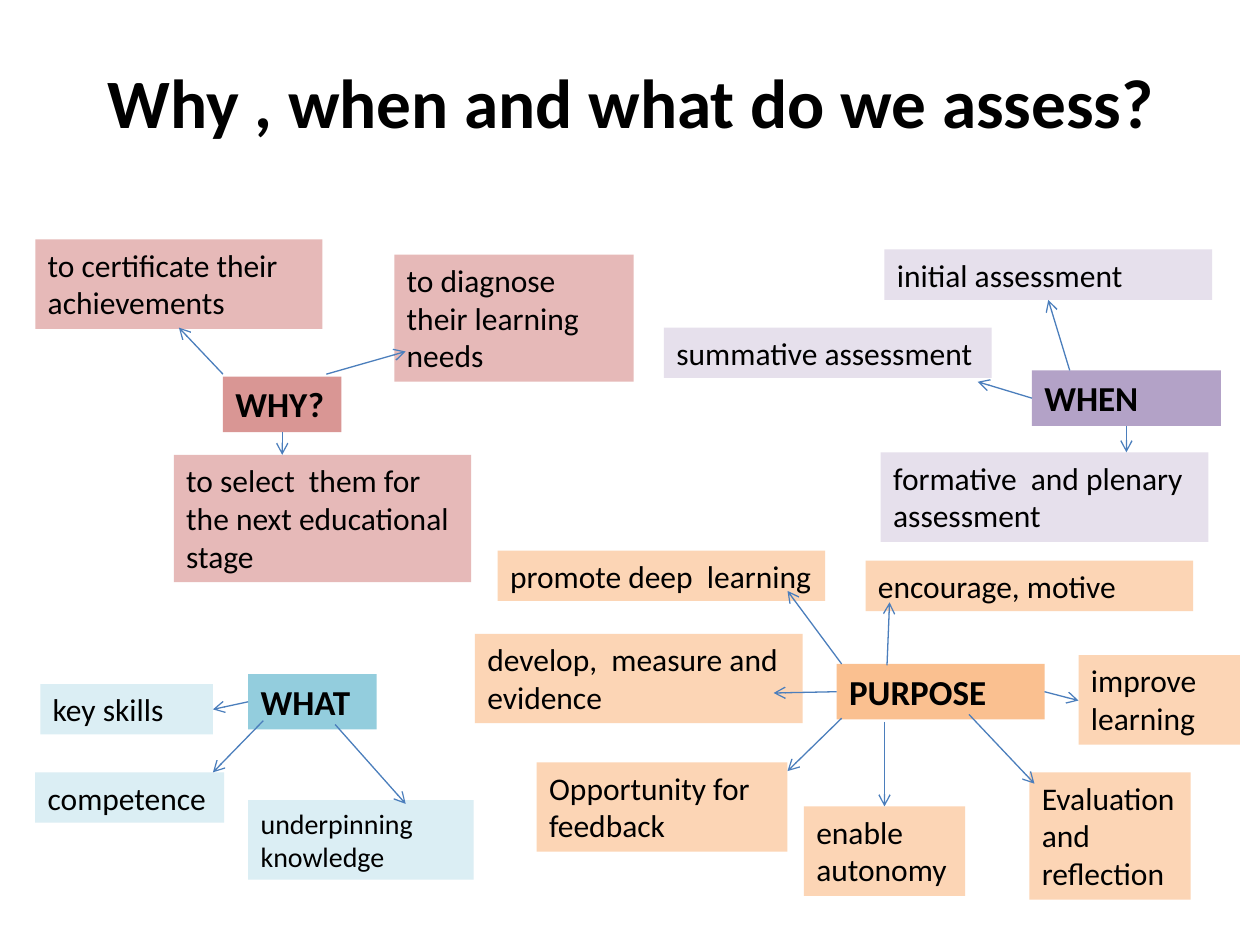
from dataclasses import dataclass

from lxml import etree
from pptx import Presentation
from pptx import util as u
from pptx.dml.color import RGBColor
from pptx.enum import shapes, text
from pptx.oxml.ns import qn

SLIDE_WIDTH, SLIDE_HEIGHT = u.Inches(10), u.Inches(7.5)
COLUMN, ROW = SLIDE_WIDTH / 100, SLIDE_HEIGHT / 75

BLACK = RGBColor(0x00, 0x00, 0x00)
ARROW_BLUE = RGBColor(0x4B, 0x7E, 0xBC)
RED, PALE_RED = RGBColor(0xD9, 0x96, 0x94), RGBColor(0xE6, 0xB9, 0xB8)
AQUA, PALE_AQUA = RGBColor(0x93, 0xCD, 0xDD), RGBColor(0xDB, 0xEE, 0xF4)
PURPLE, PALE_PURPLE = RGBColor(0xB3, 0xA2, 0xC7), RGBColor(0xE6, 0xE0, 0xEC)
ORANGE, PALE_ORANGE = RGBColor(0xFA, 0xC0, 0x90), RGBColor(0xFC, 0xD5, 0xB5)

TITLE_FONT = {"name": "Calibri", "size": u.Pt(39.6), "bold": True}
HUB_FONT = {"name": "Calibri", "size": u.Pt(20), "bold": True}
HUB_ROWS = 4.4
# Box height in rows for each number of text lines
LINE_ROWS = {1: 4.0, 2: 7.1, 3: 10.1}


@dataclass
class Answer:
    """A pale box; position and width are in grid columns and rows."""
    wording: str
    column: float
    row: float
    columns: float
    lines: int = 1
    size: int = 18


@dataclass
class Arrow:
    """An arrow between two (column, row) grid points."""
    start: tuple[float, float]
    end: tuple[float, float]


@dataclass
class Cluster:
    """A question box with its answers and the arrows leading to them."""
    question: str
    column: float
    row: float
    columns: float
    fill: RGBColor
    answer_fill: RGBColor
    answers: list[Answer]
    arrows: list[Arrow]


CLUSTERS = [
    Cluster("WHY?", 17.7, 29.9, 9.4, RED, PALE_RED, [
        Answer("to diagnose their learning needs", 31.3, 20.2, 19, 3),
        Answer("to select  them for the next educational stage", 13.8, 36.1, 23.6, 3),
        Answer("to certificate their achievements", 2.8, 19, 22.8, 2),
    ], [
        Arrow((25.9, 29.7), (32.2, 27.9)),
        Arrow((17.7, 29.7), (14.2, 26)),
        Arrow((22.4, 34.3), (22.4, 36.1)),
    ]),
    Cluster("WHAT", 19.7, 53.5, 10.2, AQUA, PALE_AQUA, [
        Answer("underpinning knowledge", 19.7, 63.5, 17.9, 2, 16),
        Answer("competence", 2.8, 61.3, 15),
        Answer("key skills", 3.2, 54.3, 13.7),
    ], [
        Arrow((19.7, 55.7), (16.9, 56.3)),
        Arrow((20.9, 57.2), (16.9, 61.3)),
        Arrow((26.6, 57.5), (32.2, 63.8)),
    ]),
    Cluster("WHEN", 81.9, 29.4, 15, PURPLE, PALE_PURPLE, [
        Answer("initial assessment", 70.2, 19.8, 26),
        Answer("formative  and plenary assessment", 69.9, 35.9, 26, 2),
        Answer("summative assessment", 52.7, 26, 26),
    ], [
        Arrow((84.9, 29.4), (83.2, 23.8)),
        Arrow((81.9, 31.6), (77.6, 30.3)),
        Arrow((89.4, 33.8), (89.4, 35.9)),
    ]),
    Cluster("PURPOSE", 66.4, 52.7, 16.5, ORANGE, PALE_ORANGE, [
        Answer("encourage, motive", 68.7, 44.5, 26),
        Answer("promote deep  learning", 39.5, 43.7, 26),
        Answer("develop,  measure and evidence", 37.7, 50.3, 26, 2),
        Answer("Opportunity for feedback", 42.6, 60.5, 19.9, 2),
        Answer("enable autonomy", 63.8, 64, 12.8, 2),
        Answer("Evaluation and reflection", 81.7, 61.3, 12.8, 3),
        Answer("improve learning", 85.6, 52, 12.8, 2),
    ], [
        Arrow((70.4, 52.8), (70.6, 47.8)),
        Arrow((66.8, 52.7), (62.5, 46.9)),
        Arrow((66.4, 54.9), (61.4, 55)),
        Arrow((70.2, 57.3), (70.2, 64)),
        Arrow((66.8, 57), (62.5, 61.2)),
        Arrow((76.9, 56.7), (82.1, 62.2)),
        Arrow((82.9, 54.9), (85.6, 55.6)),
    ]),
]


def grid(column: float, row: float) -> tuple[int, int]:
    """Turn columns and rows into slide lengths."""
    return round(column * COLUMN), round(row * ROW)


def format_font(font, values: dict) -> None:
    for name, value in values.items():
        setattr(font, name, value)
    font.color.rgb = BLACK


def add_title(slide, wording: str) -> None:
    title = slide.shapes.title
    title.left, title.top = grid(5.1, 2.9)
    title.width, title.height = grid(90, 10.2)
    title.text_frame.vertical_anchor = text.MSO_ANCHOR.MIDDLE
    paragraph = title.text_frame.paragraphs[0]
    paragraph.alignment = text.PP_ALIGN.CENTER
    run = paragraph.add_run()
    run.text = wording
    format_font(run.font, TITLE_FONT)


def add_box(slide, wording: str, place: tuple[float, float],
            extent: tuple[float, float], fill: RGBColor, font: dict) -> None:
    box = slide.shapes.add_textbox(*grid(*place), *grid(*extent))
    box.fill.solid()
    box.fill.fore_color.rgb = fill
    frame = box.text_frame
    frame.word_wrap = True
    frame.auto_size = text.MSO_AUTO_SIZE.SHAPE_TO_FIT_TEXT
    run = frame.paragraphs[0].add_run()
    run.text = wording
    format_font(run.font, font)


def add_arrow(slide, arrow: Arrow) -> None:
    connector = slide.shapes.add_connector(
        shapes.MSO_CONNECTOR.STRAIGHT, *grid(*arrow.start), *grid(*arrow.end))
    connector.line.color.rgb = ARROW_BLUE
    connector.line.width = u.Pt(0.75)
    line = connector.line._get_or_add_ln()
    etree.SubElement(line, qn("a:tailEnd"), type="arrow")
    etree.SubElement(line.getparent(), qn("a:effectLst"))


def add_cluster(slide, cluster: Cluster) -> None:
    add_box(slide, cluster.question, (cluster.column, cluster.row),
            (cluster.columns, HUB_ROWS), cluster.fill, HUB_FONT)
    for answer in cluster.answers:
        rows = LINE_ROWS[answer.lines] * answer.size / 18
        font = {"name": "Calibri", "size": u.Pt(answer.size), "bold": False}
        add_box(slide, answer.wording, (answer.column, answer.row),
                (answer.columns, rows), cluster.answer_fill, font)
    for arrow in cluster.arrows:
        add_arrow(slide, arrow)


def main() -> None:
    presentation = Presentation()
    presentation.slide_width, presentation.slide_height = SLIDE_WIDTH, SLIDE_HEIGHT
    slide = presentation.slides.add_slide(
        presentation.slide_layouts.get_by_name("Title Only"))
    add_title(slide, "Why , when and what do we assess?")
    for cluster in CLUSTERS:
        add_cluster(slide, cluster)
    presentation.save("out.pptx")


if __name__ == "__main__":
    main()
